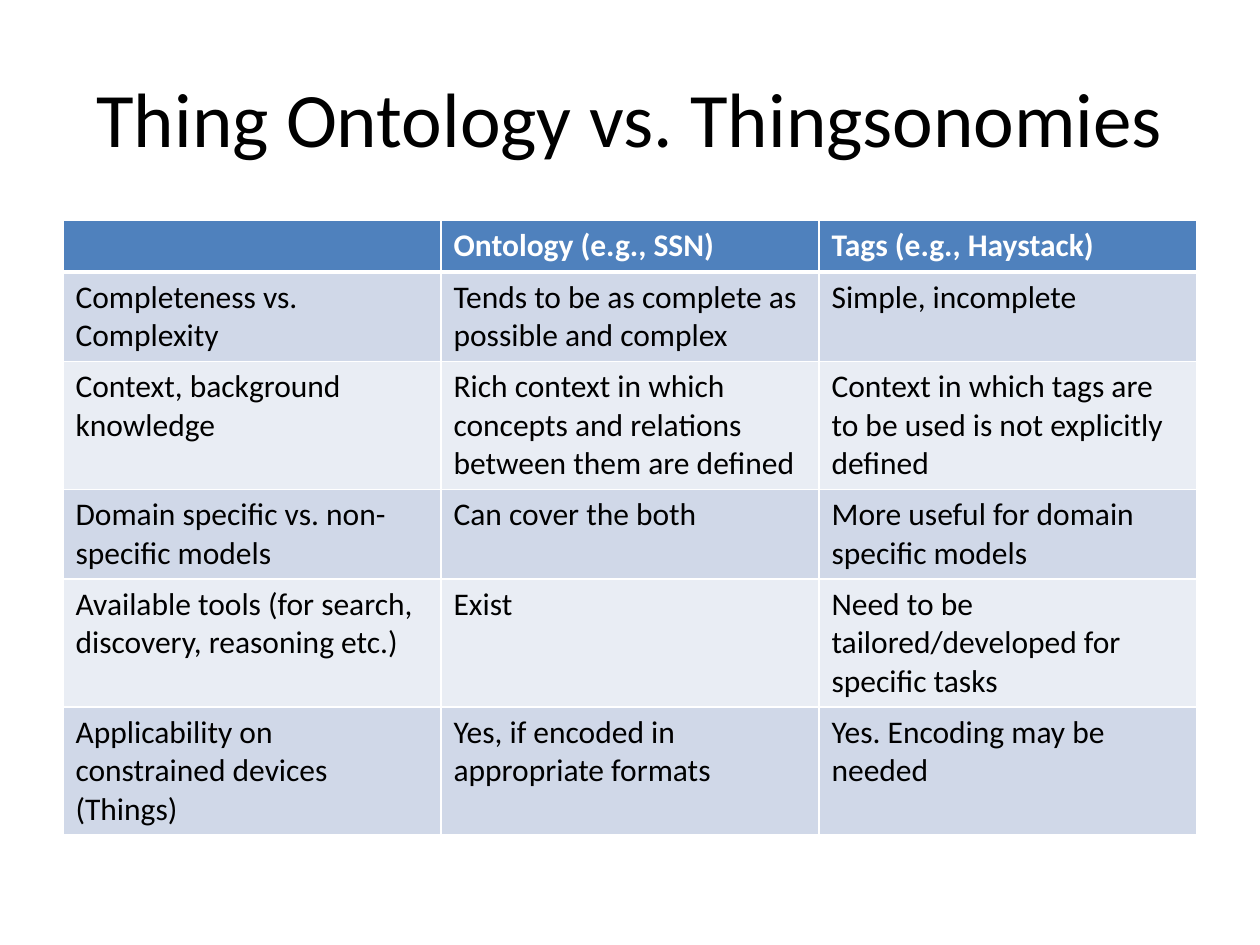
import pptx
import pptx.dml.color
import pptx.enum.text
import pptx.oxml.ns
import pptx.util
from lxml import etree
from pptx.util import Inches

FONT = "Calibri"
COLORS = {
    "text": "000000",
    "header": "4F81BD",
    "header_text": "FFFFFF",
    "band_dark": "D0D8E8",
    "band_light": "E9EDF4",
    "border": "FFFFFF",
}
ROWS = [
    ["", "Ontology (e.g., SSN)", "Tags (e.g., Haystack)"],
    ["Completeness vs. Complexity",
     "Tends to be as complete as possible and complex",
     "Simple, incomplete"],
    ["Context, background knowledge",
     "Rich context in which concepts and relations between them are defined",
     "Context in which tags are to be used is not explicitly defined"],
    ["Domain specific vs. non-specific models",
     "Can cover the both",
     "More useful for domain specific models"],
    ["Available tools (for search, discovery, reasoning etc.)",
     "Exist",
     "Need to be tailored/developed for specific tasks"],
    ["Applicability on constrained devices (Things)",
     "Yes, if encoded in appropriate formats",
     "Yes. Encoding may be needed"],
]


def color(name):
    return pptx.dml.color.RGBColor.from_string(COLORS[name])


def format_font(font, size, color_name, bold=False):
    font.name = FONT
    font.size = pptx.util.Pt(size)
    font.bold = bold
    font.color.rgb = color(color_name)


def add_title(page, text):
    title = page.shapes.title
    title.left, title.top = Inches(0.5), Inches(0.3)
    title.width, title.height = Inches(9), Inches(1.25)
    frame = title.text_frame
    frame.text = text
    frame.vertical_anchor = pptx.enum.text.MSO_ANCHOR.MIDDLE
    para = frame.paragraphs[0]
    para.alignment = pptx.enum.text.PP_ALIGN.CENTER
    format_font(para.font, 44, "text")


def set_borders(cell, widths):
    """Draw solid cell borders; widths maps a side (L, R, T, B) to points."""
    properties = cell._tc.get_or_add_tcPr()
    for position, (side, width) in enumerate(widths.items()):
        line = etree.Element(pptx.oxml.ns.qn(f"a:ln{side}"),
                             w=str(pptx.util.Pt(width)))
        fill = etree.SubElement(line, pptx.oxml.ns.qn("a:solidFill"))
        etree.SubElement(fill, pptx.oxml.ns.qn("a:srgbClr"), val=COLORS["border"])
        properties.insert(position, line)


def format_cell(cell, text, row):
    header = row == 0
    cell.text = text
    format_font(cell.text_frame.paragraphs[0].font, 18,
                "header_text" if header else "text", header)
    band = "band_dark" if row % 2 else "band_light"
    cell.fill.solid()
    cell.fill.fore_color.rgb = color("header" if header else band)
    # The rule under the header is thicker and shared with the first body row
    set_borders(cell, {"L": 1, "R": 1, "T": 3 if row == 1 else 1,
                       "B": 3 if header else 1})


def add_comparison_table(page, rows):
    row_height = Inches(0.41)
    table = page.shapes.add_table(len(rows), len(rows[0]), Inches(0.5), Inches(1.75),
                                  Inches(9), row_height * len(rows)).table
    for row, texts in enumerate(rows):
        table.rows[row].height = row_height
        for column, text in enumerate(texts):
            format_cell(table.cell(row, column), text, row)


def main():
    deck = pptx.Presentation()
    deck.slide_width, deck.slide_height = Inches(10), Inches(7.5)
    page = deck.slides.add_slide(deck.slide_layouts[5])  # title only
    add_title(page, "Thing Ontology vs. Thingsonomies")
    add_comparison_table(page, ROWS)
    deck.save("out.pptx")


if __name__ == "__main__":
    main()
